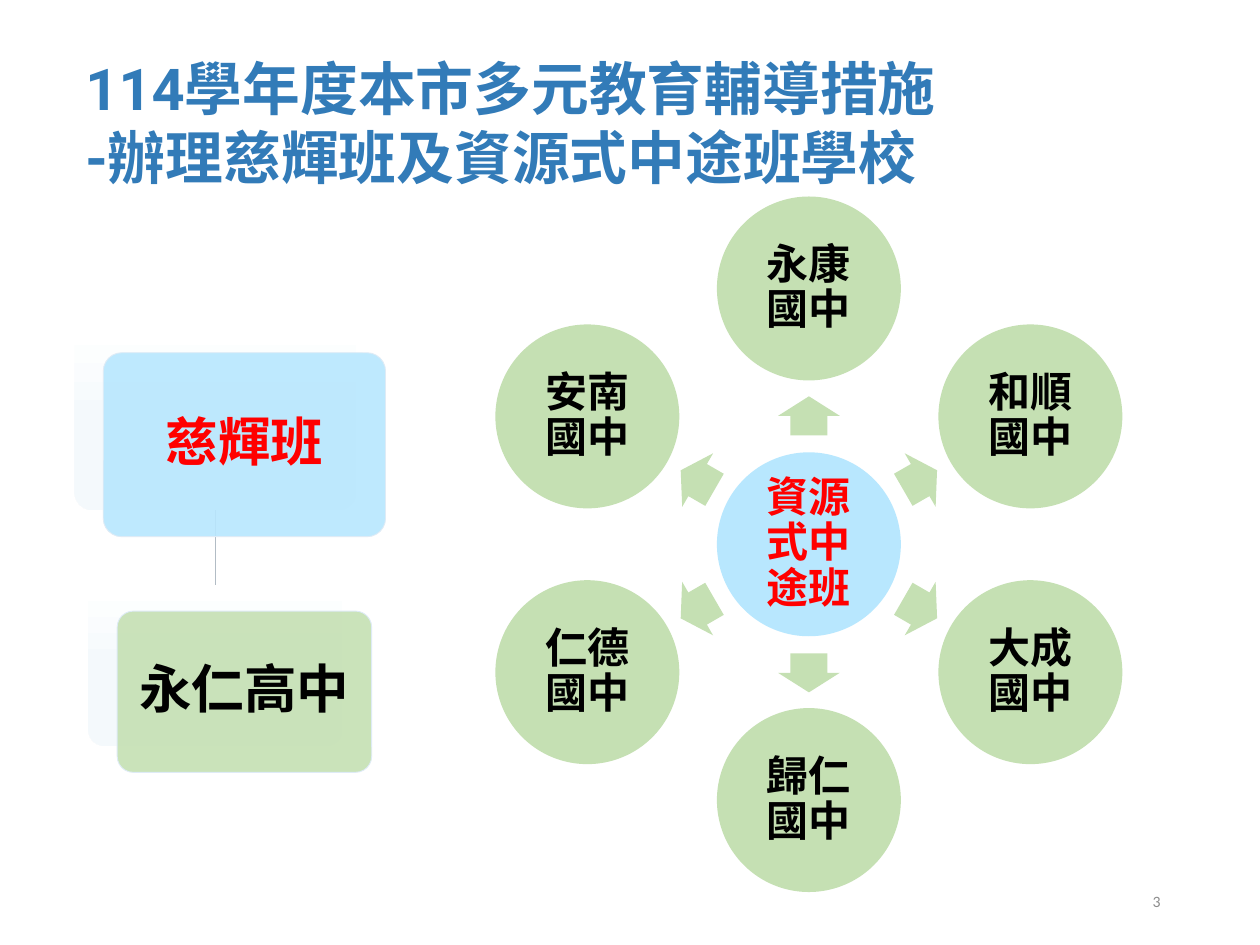
import math

import pptx
import pptx.util
import pptx.dml.color
import pptx.enum.shapes
import pptx.enum.text
import pptx.oxml.ns
from lxml import etree

Inches = pptx.util.Inches
Pt = pptx.util.Pt
SHAPE = pptx.enum.shapes.MSO_SHAPE
ALIGN = pptx.enum.text.PP_ALIGN
ANCHOR = pptx.enum.text.MSO_ANCHOR
qn = pptx.oxml.ns.qn

COLORS = {
    "blue": "B8E7FE", "green": "C5E0B3", "red": "FF0000", "black": "000000",
    "title": "327BB8", "number": "8C8C8C", "edge": "DEEBF6", "link": "B2BCC5",
    "plate_top": "FFFFFF", "plate_bottom": "F4F9FC",
}
CJK = "Noto Sans CJK SC"


def rgb(name):
    return pptx.dml.color.RGBColor.from_string(COLORS[name])


class SlideBuilder:
    def __init__(self, slide):
        self.s = slide

    def set_text(self, sp, text, size, color, font=CJK, bold=True, align=ALIGN.CENTER,
                 inset=None, spacing=None):
        tf = sp.text_frame
        tf.text = text
        tf.word_wrap = True
        if inset is not None:
            tf.margin_left = tf.margin_right = Inches(inset)
            tf.margin_top = tf.margin_bottom = Inches(inset)
        for p in tf.paragraphs:
            p.alignment = align
            p.line_spacing = spacing
            for r in p.runs:
                r.font.size = Pt(size)
                r.font.bold = bold
                r.font.name = font
                r.font.color.rgb = rgb(color)
                ea = etree.SubElement(r.font._element, qn("a:ea"))
                ea.set("typeface", font)
        return tf

    def shape(self, kind, x, y, w, h, fill=None):
        sp = self.s.shapes.add_shape(kind, Inches(x), Inches(y), Inches(w), Inches(h))
        sp.shadow.inherit = False
        sp.line.fill.background()
        if fill:
            sp.fill.solid()
            sp.fill.fore_color.rgb = rgb(fill)
        return sp

    def circle(self, cx, cy, size, fill, text, color):
        sp = self.shape(SHAPE.OVAL, cx - size / 2, cy - size / 2, size, size, fill)
        tf = self.set_text(sp, text, 24, color, inset=0.03, spacing=0.9)
        tf.vertical_anchor = ANCHOR.MIDDLE

    def arrow(self, cx, cy, w, h, angle):
        sp = self.shape(SHAPE.RIGHT_ARROW, cx - w / 2, cy - h / 2, w, h, "green")
        sp.adjustments[0] = 0.6
        sp.adjustments[1] = 0.5
        sp.rotation = angle % 360

    def plate(self, x, y, w, h):
        sp = self.shape(SHAPE.ROUNDED_RECTANGLE, x, y, w, h)
        sp.adjustments[0] = 0.1
        sp.fill.gradient()
        sp.fill.gradient_angle = 270
        top, bottom = sp.fill.gradient_stops
        top.position, bottom.position = 0, 0.5
        top.color.rgb, bottom.color.rgb = rgb("plate_top"), rgb("plate_bottom")
        return sp

    def card(self, x, y, w, h, fill, text, color):
        sp = self.shape(SHAPE.ROUNDED_RECTANGLE, x, y, w, h, fill)
        sp.adjustments[0] = 0.1
        solid = sp._element.spPr.find(qn("a:solidFill"))
        etree.SubElement(solid[0], qn("a:alpha")).set("val", "90000")
        sp.line.color.rgb = rgb("edge")
        sp.line.width = Pt(0.5)
        tf = self.set_text(sp, text, 30, color, inset=0.12, spacing=0.9)
        tf.vertical_anchor = ANCHOR.MIDDLE

    def link(self, upper, lower):
        line = self.s.shapes.add_connector(
            pptx.enum.shapes.MSO_CONNECTOR.STRAIGHT, 0, 0, 0, 0)
        line.begin_connect(upper, 2)
        line.end_connect(lower, 0)
        line.line.color.rgb = rgb("link")
        line.line.width = Pt(1)
        etree.SubElement(line._element.spPr, qn("a:effectLst"))

    def text(self, x, y, w, h, text, size, color, font, **style):
        sp = self.s.shapes.add_textbox(Inches(x), Inches(y), Inches(w), Inches(h))
        return self.set_text(sp, text, size, color, font, **style)


def main():
    prs = pptx.Presentation()
    prs.slide_width, prs.slide_height = Inches(10), Inches(7.5)
    b = SlideBuilder(prs.slides.add_slide(prs.slide_layouts[6]))

    cx, cy, size = 6.42, 4.32, 1.46
    b.circle(cx, cy, size, "blue", "資源式中途班", "red")
    schools = ["永康國中", "和順國中", "大成國中", "歸仁國中", "仁德國中", "安南國中"]
    for i, school in enumerate(schools):
        angle = -90 + i * 360 / len(schools)
        dx, dy = math.cos(math.radians(angle)), math.sin(math.radians(angle))
        b.arrow(cx + 1.02 * dx, cy + 1.02 * dy, 0.31, 0.49, angle)
        b.circle(cx + 2.03 * dx, cy + 2.03 * dy, size, "green", school, "black")

    offset = 0.23, 0.21
    cards = [
        (0.59, 2.59, 2.24, 1.46, "blue", "慈輝班", "red"),
        (0.7, 4.64, 2.02, 1.28, "green", "永仁高中", "black"),
    ]
    plates = [b.plate(*card[:4]) for card in cards]
    b.link(*plates)
    for x, y, *rest in cards:
        b.card(x + offset[0], y + offset[1], *rest)

    tf = b.text(0.58, 0.37, 10.71, 1.21,
                "114學年度本市多元教育輔導措施\n-辦理慈輝班及資源式中途班學校",
                33, "title", "Roboto", align=ALIGN.LEFT)
    tf.auto_size = pptx.enum.text.MSO_AUTO_SIZE.SHAPE_TO_FIT_TEXT
    tf = b.text(7.06, 6.95, 2.25, 0.4, "3", 9, "number", "Calibri",
                bold=False, align=ALIGN.RIGHT)
    tf.vertical_anchor = ANCHOR.MIDDLE

    prs.save("out.pptx")


if __name__ == "__main__":
    main()
